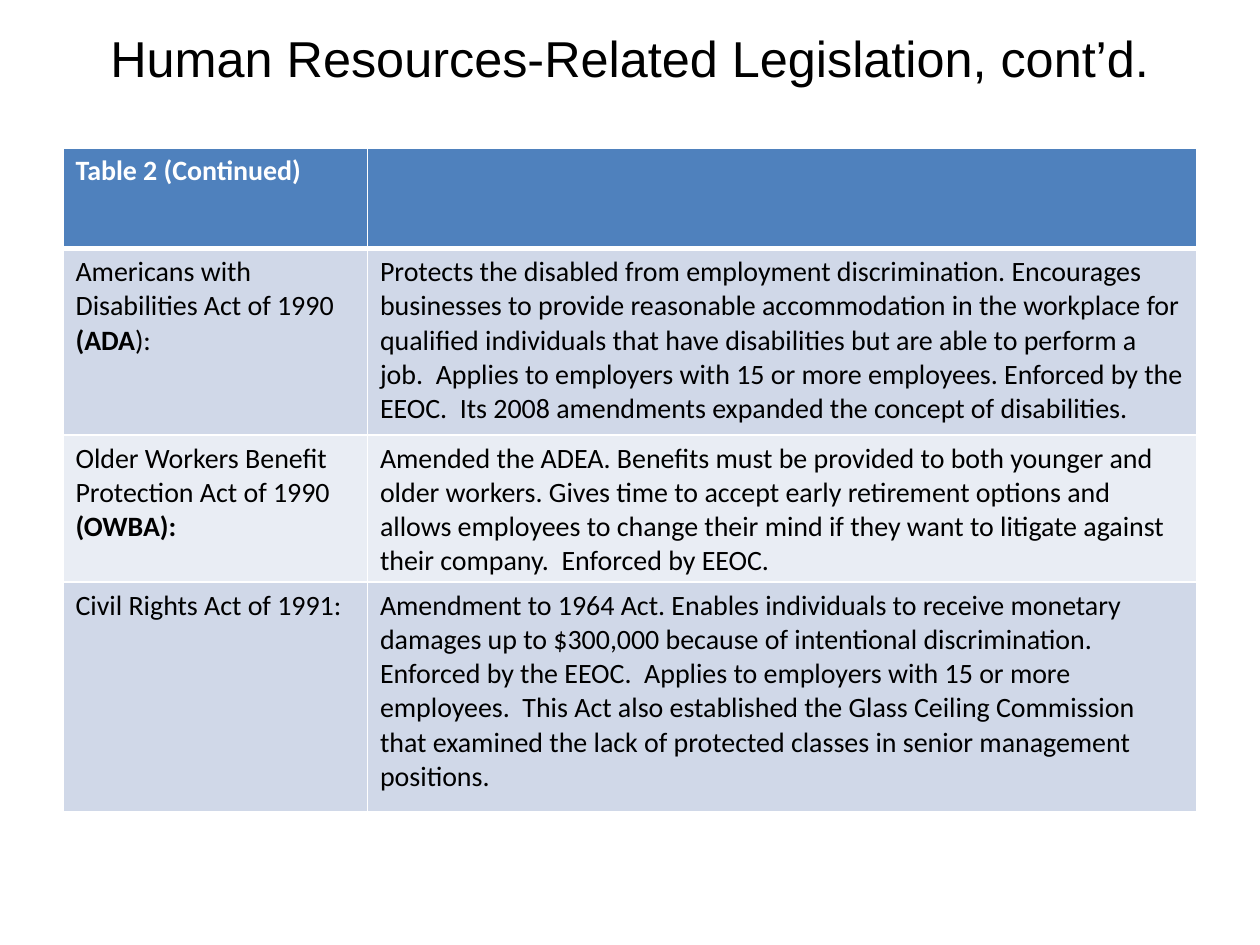
from lxml import etree
from pptx import Presentation
from pptx.dml.color import RGBColor
from pptx.enum.text import MSO_ANCHOR, PP_ALIGN
from pptx.oxml.ns import qn
from pptx.util import Pt

CENTER = PP_ALIGN.CENTER
MIDDLE = MSO_ANCHOR.MIDDLE
WHITE, BLACK = "FFFFFF", "000000"
HEADER_FILL = "4F81BD"
BAND_FILLS = ("D0D8E8", "E9EDF4")
COLUMN_WIDTHS = (174, 474)
ROW_HEIGHTS = (57.6, 106.6, 82, 131)
TITLE = "Human Resources-Related Legislation, cont’d."

# Each cell is a list of (text, bold) runs.
ROWS = [
    ([("Table 2 (Continued)", True)], []),
    (
        [("Americans with Disabilities Act of 1990 ", False), ("(ADA", True), ("):", False)],
        [("Protects the disabled from employment discrimination. Encourages businesses to "
          "provide reasonable accommodation in the workplace for qualified individuals that "
          "have disabilities but are able to perform a job.  Applies to employers with 15 or "
          "more employees. Enforced by the EEOC.  Its 2008 amendments expanded the concept "
          "of disabilities.", False)],
    ),
    (
        [("Older Workers Benefit Protection Act of 1990 ", False), ("(OWBA):", True)],
        [("Amended the ADEA. Benefits must be provided to both younger and older workers. "
          "Gives time to accept early retirement options and allows employees to change "
          "their mind if they want to litigate against their company.  Enforced by EEOC.",
          False)],
    ),
    (
        [("Civil Rights Act of 1991:", False)],
        [("Amendment to 1964 Act. Enables individuals to receive monetary damages up to "
          "$300,000 because of intentional discrimination.  Enforced by the EEOC.  Applies "
          "to employers with 15 or more employees.  This Act also established the Glass "
          "Ceiling Commission that examined the lack of protected classes in senior "
          "management positions.", False)],
    ),
]


def rgb(value):
    """Return the colour for a hex string."""
    return RGBColor.from_string(value)


def set_font(p, name, size, color):
    """Set the font shared by all runs of a paragraph."""
    p.font.name = name
    p.font.size = Pt(size)
    p.font.color.rgb = rgb(color)


def set_borders(cell, widths):
    """Draw white borders of the given widths, placed before the cell fill."""
    tc_pr = cell._tc.get_or_add_tcPr()
    for i, (side, width) in enumerate(widths.items()):
        ln = etree.Element(qn(f"a:ln{side}"), w=str(Pt(width)))
        fill = etree.SubElement(ln, qn("a:solidFill"))
        etree.SubElement(fill, qn("a:srgbClr"), val=WHITE)
        tc_pr.insert(i, ln)


def add_title(slide, left, top, width, height):
    """Add the centred slide title."""
    tf = slide.shapes.add_textbox(Pt(left), Pt(top), Pt(width), Pt(height)).text_frame
    tf.word_wrap = True
    tf.vertical_anchor = MIDDLE
    p = tf.paragraphs[0]
    p.text = TITLE
    p.alignment = CENTER
    set_font(p, "Arial", 28.8, BLACK)


def add_legislation_table(slide, left, top, width, height):
    """Add the table of acts with a header row and banded body rows."""
    table = slide.shapes.add_table(
        len(ROWS), len(COLUMN_WIDTHS), Pt(left), Pt(top), Pt(width), Pt(height)).table
    for column, column_width in zip(table.columns, COLUMN_WIDTHS):
        column.width = Pt(column_width)
    for i, (row, row_height) in enumerate(zip(table.rows, ROW_HEIGHTS)):
        row.height = Pt(row_height)
        header = i == 0
        for cell, runs in zip(row.cells, ROWS[i]):
            cell.fill.solid()
            cell.fill.fore_color.rgb = rgb(HEADER_FILL if header else BAND_FILLS[(i - 1) % 2])
            set_borders(cell, {"L": 1, "R": 1, "T": 3 if i == 1 else 1, "B": 3 if header else 1})
            p = cell.text_frame.paragraphs[0]
            set_font(p, "Calibri", 16, WHITE if header else BLACK)
            for text, bold in runs:
                r = p.add_run()
                r.text = text
                r.font.bold = bold


def main():
    """Build and save the slide."""
    prs = Presentation()
    prs.slide_width, prs.slide_height = Pt(720), Pt(540)
    slide = prs.slides.add_slide(prs.slide_layouts[6])
    add_title(slide, 36, 0, 648, 66)
    add_legislation_table(slide, 36, 84.5, sum(COLUMN_WIDTHS), sum(ROW_HEIGHTS))
    prs.save("out.pptx")


if __name__ == "__main__":
    main()
